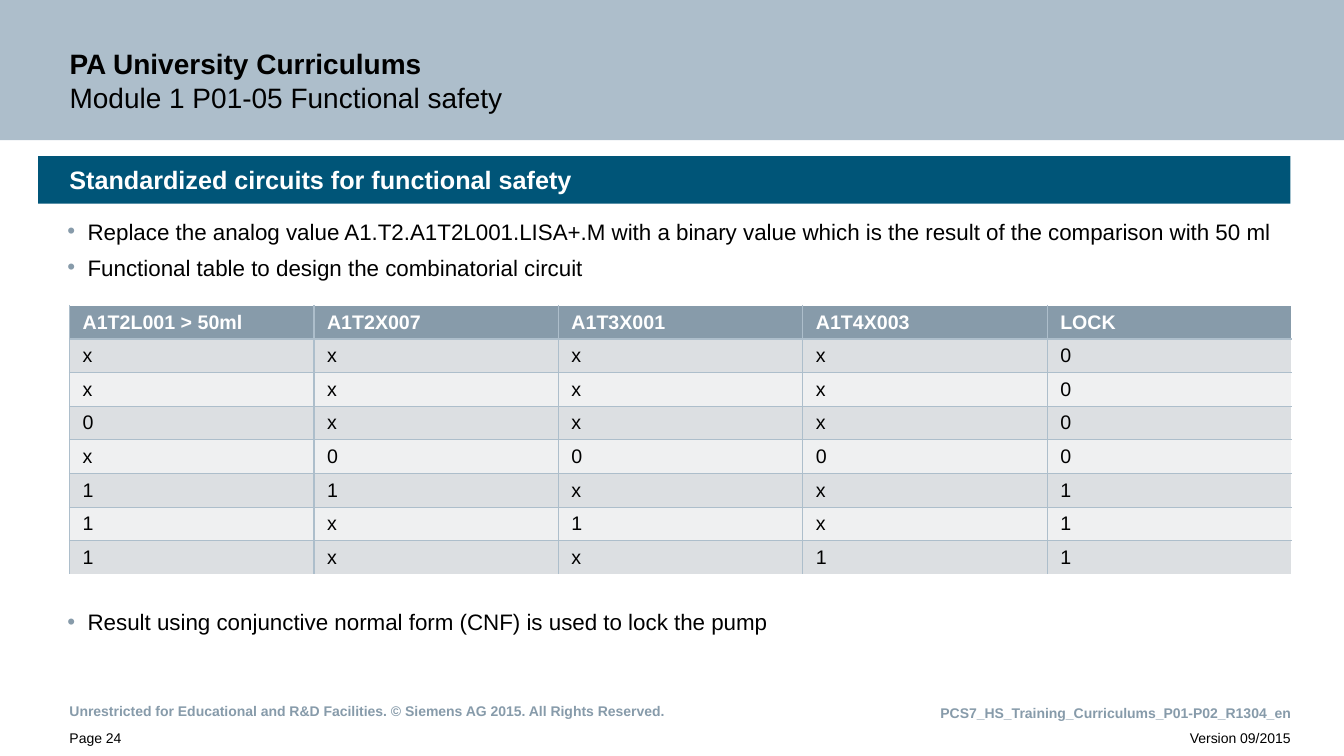
import pptx
import pptx.dml.color
import pptx.enum.shapes
import pptx.enum.text
import pptx.oxml
import pptx.oxml.ns
import pptx.util

Inches, Pt = pptx.util.Inches, pptx.util.Pt
ANCHOR = pptx.enum.text.MSO_ANCHOR
ALIGN = pptx.enum.text.PP_ALIGN

COLORS = {
    "black": "000000", "white": "FFFFFF", "band": "ADBECB", "section": "005578",
    "slate": "879BAA", "odd": "DCDFE2", "even": "EFF0F1",
}
BULLETS = [  # text, space before in points
    ("Replace the analog value A1.T2.A1T2L001.LISA+.M with a binary value "
     "which is the result of the comparison with 50 ml", 0),
    ("Functional table to design the combinatorial circuit", 6.6),
    ("Result using conjunctive normal form (CNF) is used to lock the pump", 234),
]
HEADINGS = ["A1T2L001 > 50ml", "A1T2X007", "A1T3X001", "A1T4X003", "LOCK"]
STATES = ["xxxx0", "xxxx0", "0xxx0", "x0000", "11xx1", "1x1x1", "1xx11"]


def rgb(name):
    return pptx.dml.color.RGBColor.from_string(COLORS[name])


def add_run(p, text, size, color="black", bold=False):
    r = p.add_run()
    r.text = text
    r.font.name = "Arial"
    r.font.size = Pt(size)
    r.font.bold = bold
    r.font.color.rgb = rgb(color)


def set_frame(tf, insets, anchor=ANCHOR.TOP, wrap=True):
    """Set insets (left, top, right, bottom in inches), anchor and wrapping."""
    tf.auto_size = pptx.enum.text.MSO_AUTO_SIZE.NONE
    tf.word_wrap = wrap
    tf.vertical_anchor = anchor
    tf.margin_left, tf.margin_top, tf.margin_right, tf.margin_bottom = map(Inches, insets)


def place(sp, left, top, width, height):
    sp.left, sp.top, sp.width, sp.height = map(Inches, (left, top, width, height))


def add_bar(s, box, color):
    sp = s.shapes.add_shape(pptx.enum.shapes.MSO_SHAPE.RECTANGLE, *map(Inches, box))
    sp.shadow.inherit = False
    sp.fill.solid()
    sp.fill.fore_color.rgb = rgb(color)
    sp.line.fill.background()
    return sp


def add_footer(s, box, insets, text, color="black", align=ALIGN.LEFT,
               anchor=ANCHOR.TOP, spacing=1.1, wrap=True):
    tf = s.shapes.add_textbox(*map(Inches, box)).text_frame
    set_frame(tf, insets, anchor, wrap)
    p = tf.paragraphs[0]
    p.alignment = align
    p.line_spacing = spacing
    add_run(p, text, 10, color, bold=color == "slate")


def add_title(s):
    title = s.shapes.title
    place(title, 0, 0, 13.34, 1.39)
    band = add_bar(s, (0, 0, 13.34, 1.39), "band")
    title.element.addprevious(band.element)
    set_frame(title.text_frame, (0.69, 0.43, 2.32, 0.26), ANCHOR.BOTTOM)
    p = title.text_frame.paragraphs[0]
    p.alignment = ALIGN.LEFT
    add_run(p, "PA University Curriculums", 20, bold=True)
    p.add_line_break()
    add_run(p, "Module 1 P01-05 Functional safety", 20)


def set_bullet(p):
    pPr = p._p.get_or_add_pPr()
    pPr.set("marL", str(Inches(0.2)))
    pPr.set("indent", str(-Inches(0.2)))
    ns = pptx.oxml.ns.nsdecls("a")
    for xml in (f'<a:buClr {ns}><a:srgbClr val="{COLORS["slate"]}"/></a:buClr>',
                f'<a:buFont {ns} typeface="Arial"/>',
                f'<a:buChar {ns} char="•"/>'):
        pPr.append(pptx.oxml.parse_xml(xml))


def add_bullets(s):
    body = s.placeholders[1]
    place(body, 0.36, 1.55, 12.43, 5.19)
    tf = body.text_frame
    set_frame(tf, (0.31, 0.61, 0.08, 0.04))
    for i, (text, before) in enumerate(BULLETS):
        p = tf.add_paragraph() if i else tf.paragraphs[0]
        set_bullet(p)
        p.space_before = Pt(before)
        add_run(p, text, 16)


def add_section_bar(s):
    tf = add_bar(s, (0.38, 1.55, 12.43, 0.47), "section").text_frame
    set_frame(tf, (0.31, 0, 0.08, 0), ANCHOR.MIDDLE)
    p = tf.paragraphs[0]
    p.alignment = ALIGN.LEFT
    add_run(p, "Standardized circuits for functional safety", 18, "white", True)


def set_borders(cell, sides):
    tcPr = cell._tc.get_or_add_tcPr()
    for side in sides:
        tcPr.append(pptx.oxml.parse_xml(
            f'<a:ln{side} {pptx.oxml.ns.nsdecls("a")} w="{Pt(1)}"><a:solidFill>'
            f'<a:srgbClr val="{COLORS["band"]}"/></a:solidFill></a:ln{side}>'))


def add_function_table(s):
    rows = [HEADINGS, *STATES]
    last_row, last_col = len(rows) - 1, len(HEADINGS) - 1
    table = s.shapes.add_table(len(rows), len(HEADINGS), Inches(0.69), Inches(3.03),
                               Inches(12.13), Inches(2.67)).table
    table.first_row = table.horz_banding = False
    for i, row in enumerate(rows):
        fill = "slate" if i == 0 else "odd" if i % 2 else "even"
        for j, text in enumerate(row):
            cell = table.cell(i, j)
            cell.vertical_anchor = ANCHOR.MIDDLE
            cell.margin_left = cell.margin_right = Inches(0.13)
            cell.margin_top = cell.margin_bottom = Inches(0.05)
            shown = {"L": True, "R": j < last_col, "T": i > 0, "B": i < last_row}
            set_borders(cell, [side for side in shown if shown[side]])
            cell.fill.solid()
            cell.fill.fore_color.rgb = rgb(fill)
            add_run(cell.text_frame.paragraphs[0], text, 14,
                    "black" if i else "white", bold=i == 0)


def main():
    prs = pptx.Presentation()
    prs.slide_width, prs.slide_height = Inches(13.34), Inches(7.5)
    s = prs.slides.add_slide(prs.slide_layouts[1])
    add_title(s)
    add_footer(s, (0, 6.74, 13.34, 0.47), (0.69, 0.16, 3.51, 0),
               "Unrestricted for Educational and R&D Facilities. "
               "© Siemens AG 2015. All Rights Reserved.",
               "slate", anchor=ANCHOR.MIDDLE, spacing=1.0)
    add_footer(s, (0, 7.22, 1.93, 0.28), (0.69, 0, 0, 0.13), "Page 24")
    add_footer(s, (4.14, 7.22, 9.2, 0.28), (0, 0, 0.53, 0.13),
               "Version 09/2015", align=ALIGN.RIGHT)
    add_footer(s, (9.3, 6.97, 3.51, 0.17), (0, 0, 0, 0),
               "PCS7_HS_Training_Curriculums_P01-P02_R1304_en",
               "slate", ALIGN.RIGHT, wrap=False)
    add_bullets(s)
    add_section_bar(s)
    add_function_table(s)
    prs.save("out.pptx")


if __name__ == "__main__":
    main()
